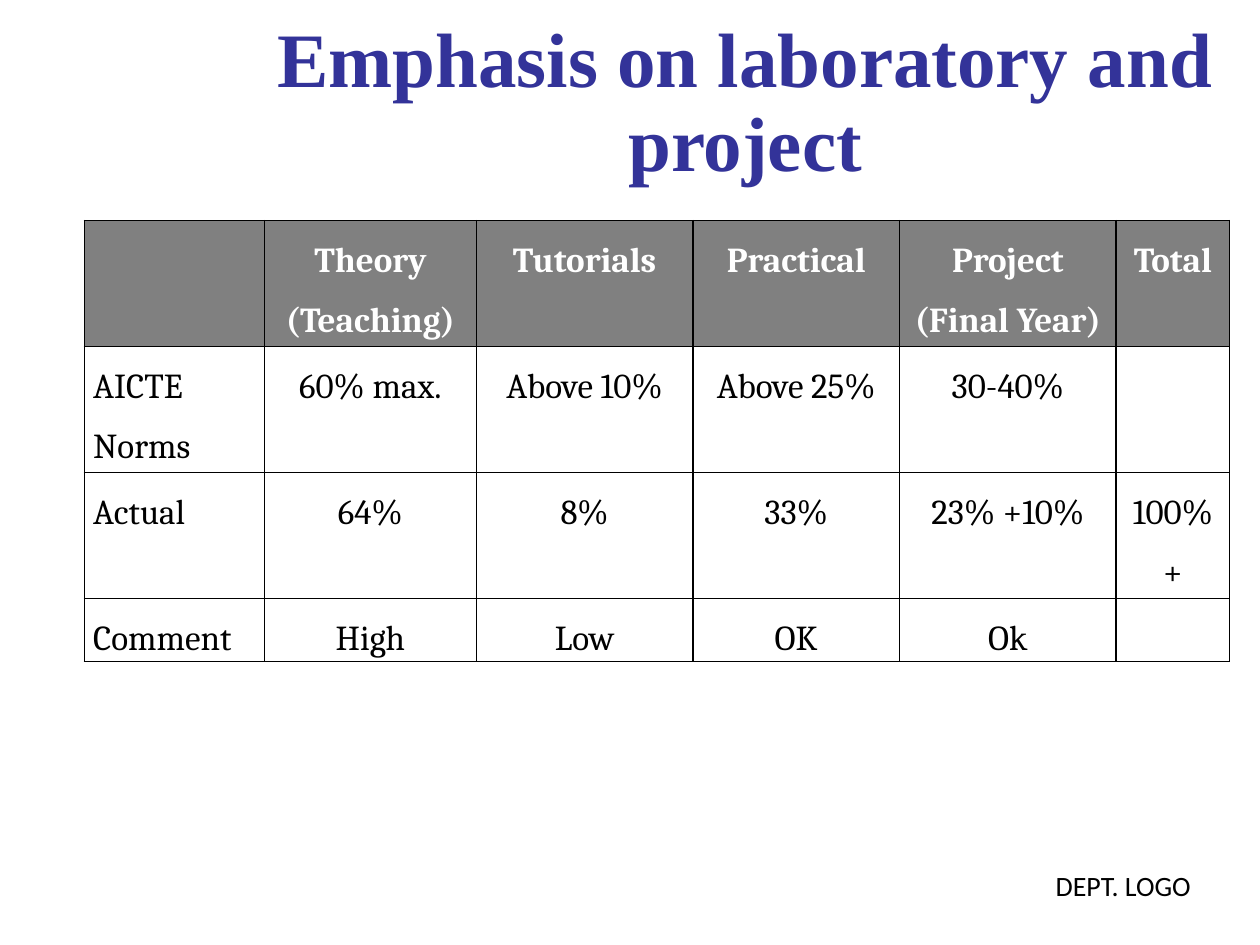
from typing import NamedTuple

from lxml.etree import SubElement
from pptx import Presentation
from pptx.dml.color import RGBColor
from pptx.enum.shapes import MSO_SHAPE
from pptx.enum.text import MSO_ANCHOR, PP_ALIGN
from pptx.oxml.ns import qn
from pptx.util import Inches, Pt

BLACK, WHITE, GREY, NAVY = "000000", "FFFFFF", "808080", "333399"


class Row(NamedTuple):
    height: float
    texts: tuple[str, ...]


COL_WIDTHS = (1.43, 1.68, 1.72, 1.64, 1.72, 0.9)
ROWS = (
    Row(0.97, ("", "Theory (Teaching)", "Tutorials", "Practical",
               "Project\n(Final Year)", "Total")),
    Row(0.74, ("AICTE Norms", "60% max.", "Above 10%", "Above 25%", "30-40%", "")),
    Row(0.39, ("Actual", "64%", "8%", "33%", "23% +10%", "100% +")),
    Row(0.4, ("Comment", "High", "Low", "OK", "Ok", "")),
)


def rgb(value: str) -> RGBColor:
    return RGBColor.from_string(value)


def write(tf, text: str, *, size: float, font: str, color: str = BLACK,
          bold: bool = False, align=PP_ALIGN.CENTER, spacing: float = 1.0,
          after: float = 0) -> None:
    """Fill a text frame, one paragraph per line of text."""
    tf.word_wrap = True
    for i, line in enumerate(text.split("\n")):
        p = tf.paragraphs[0] if i == 0 else tf.add_paragraph()
        p.alignment = align
        p.line_spacing = spacing
        p.space_after = Pt(after)
        r = p.add_run()
        r.text = line
        r.font.size, r.font.name, r.font.bold = Pt(size), font, bold
        r.font.color.rgb = rgb(color)


def add_borders(cell, color: str, width: float) -> None:
    """Outline all four sides of a cell; lines must precede the fill."""
    tc_pr = cell._tc.get_or_add_tcPr()
    for i, side in enumerate(("lnL", "lnR", "lnT", "lnB")):
        ln = SubElement(tc_pr, qn(f"a:{side}"), w=str(Pt(width)))
        fill = SubElement(ln, qn("a:solidFill"))
        SubElement(fill, qn("a:srgbClr"), val=color)
        tc_pr.insert(i, ln)


def add_norms_table(s, left: float, top: float) -> None:
    height = sum(row.height for row in ROWS)
    table = s.shapes.add_table(
        len(ROWS), len(COL_WIDTHS), Inches(left), Inches(top),
        Inches(sum(COL_WIDTHS)), Inches(height)).table
    table.horz_banding = False
    for column, width in zip(table.columns, COL_WIDTHS):
        column.width = Inches(width)
    for i, row in enumerate(ROWS):
        table.rows[i].height = Inches(row.height)
        header = i == 0
        for j, text in enumerate(row.texts):
            cell = table.cell(i, j)
            cell.margin_left = cell.margin_right = Inches(0.07)
            cell.margin_top = cell.margin_bottom = 0
            add_borders(cell, BLACK, 1)
            if header:
                cell.fill.solid()
                cell.fill.fore_color.rgb = rgb(GREY)
            else:
                cell.fill.background()
            if text:
                write(cell.text_frame, text, size=20, font="Cambria",
                      color=WHITE if header else BLACK, bold=header,
                      align=PP_ALIGN.CENTER if j else PP_ALIGN.LEFT,
                      spacing=1.5, after=0 if header else 10)


def main() -> None:
    prs = Presentation()
    prs.slide_width, prs.slide_height = Inches(10), Inches(7.5)
    s = prs.slides.add_slide(prs.slide_layouts[6])

    # Department label in the corner
    sp = s.shapes.add_shape(MSO_SHAPE.RECTANGLE, Inches(7.83), Inches(6.55),
                            Inches(2.17), Inches(0.95))
    sp.shadow.inherit = False
    sp.fill.solid()
    sp.fill.fore_color.rgb = rgb(WHITE)
    sp.line.fill.background()
    sp.text_frame.vertical_anchor = MSO_ANCHOR.MIDDLE
    write(sp.text_frame, "DEPT. LOGO", size=16, font="Calibri")

    # Title
    title = s.shapes.add_textbox(Inches(1.83), Inches(0.08),
                                 Inches(8.17), Inches(1.5))
    title.text_frame.vertical_anchor = MSO_ANCHOR.MIDDLE
    write(title.text_frame, "Emphasis on laboratory and project", size=44,
          font="Times New Roman", color=NAVY, bold=True, spacing=0.9)

    # Norms against actual shares
    add_norms_table(s, 0.67, 1.75)

    prs.save("out.pptx")


if __name__ == "__main__":
    main()
